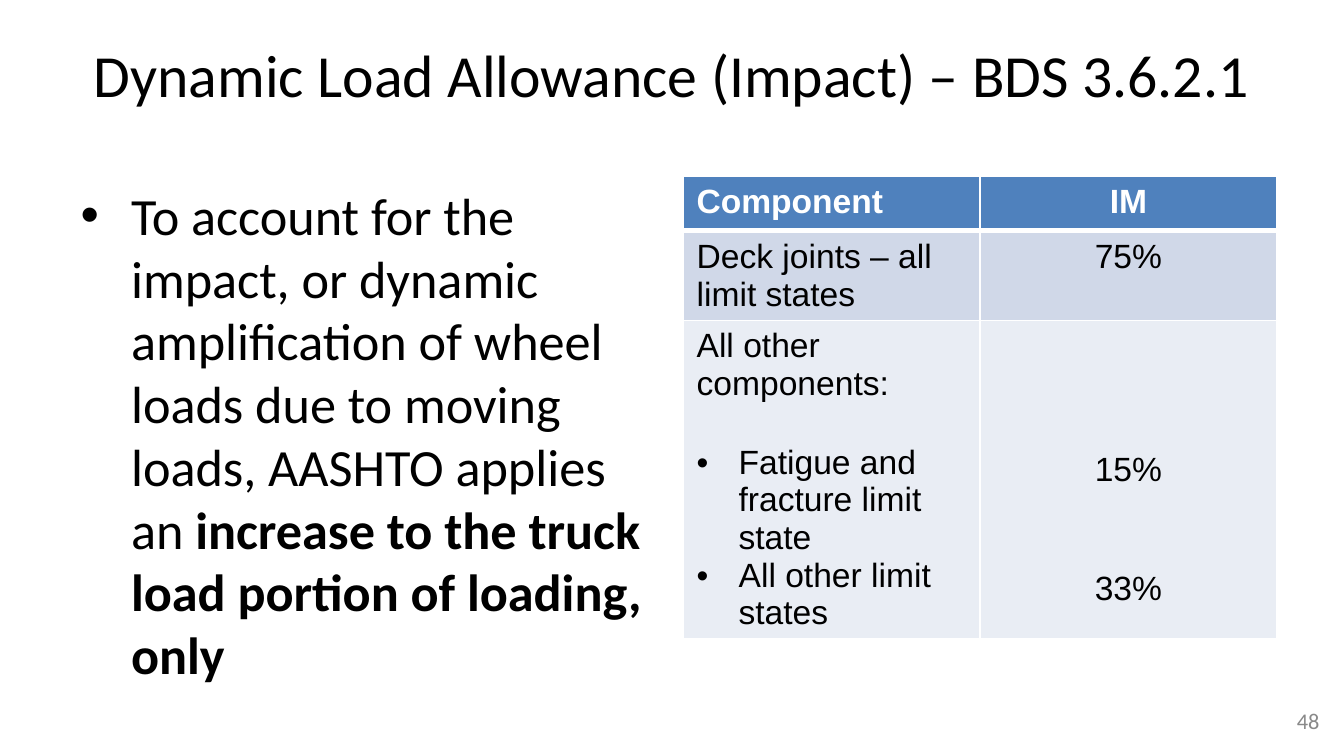
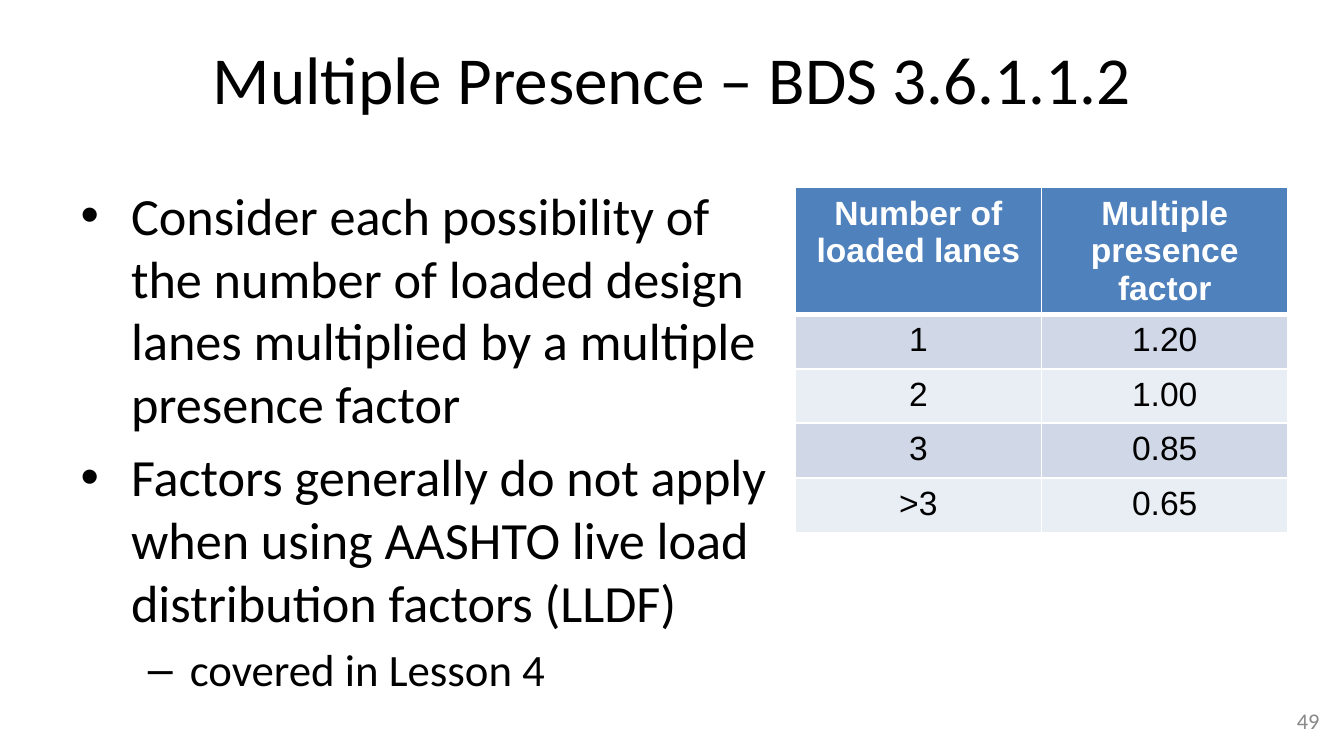
from dataclasses import dataclass

from lxml.etree import SubElement
from pptx import Presentation
from pptx.dml.color import RGBColor
from pptx.enum.text import MSO_ANCHOR, MSO_AUTO_SIZE, PP_ALIGN
from pptx.oxml.ns import qn
from pptx.util import Emu, Pt

PX = 9525  # 96 px to the inch
BLACK, WHITE, GREY = "000000", "FFFFFF", "898989"
HEADER_FILL, BAND_FILLS = "4F81BD", ("D0D8E8", "E9EDF4")
BODY_SIZES = (28, 24)
CELL_INSET = 5
BULLET_INDENT = 30


@dataclass
class Line:
    """One paragraph of a table cell; gap is the space above it in points."""
    text: str
    gap: int = 0
    bullet: bool = False


SLIDES = [
    {
        "number": "48",
        "title": "Dynamic Load Allowance (Impact) – BDS 3.6.2.1",
        "title_size": 32,
        "body_width": 424,
        "body": [
            (0, [("To account for the impact, or dynamic amplification of wheel loads "
                  "due to moving loads, AASHTO applies an ", False),
                 ("increase to the truck load portion of loading, only", True)]),
        ],
        "table_at": (488, 126),
        "column_width": 212,
        "row_heights": [39, 64, 227],
        "alignments": [PP_ALIGN.LEFT, PP_ALIGN.CENTER],
        "rows": [
            [[Line("Component")], [Line("IM")]],
            [[Line("Deck joints – all limit states")], [Line("75%")]],
            [[Line("All other components:"),
              Line("Fatigue and fracture limit state", gap=22, bullet=True),
              Line("All other limit states", bullet=True)],
             [Line("15%", gap=66), Line("33%", gap=44)]],
        ],
    },
    {
        "number": "49",
        "title": "Multiple Presence – BDS 3.6.1.1.2",
        "title_size": 36,
        "body_width": 512,
        "body": [
            (0, [("Consider each possibility of the number of loaded design lanes "
                  "multiplied by a multiple presence factor", False)]),
            (0, [("Factors generally do not apply when using AASHTO live load "
                  "distribution factors (LLDF)", False)]),
            (1, [("covered in Lesson 4", False)]),
        ],
        "table_at": (568, 134),
        "column_width": 176,
        "row_heights": [90, 39, 39, 39, 39],
        "alignments": [PP_ALIGN.CENTER, PP_ALIGN.CENTER],
        "rows": [
            [[Line("Number of loaded lanes")], [Line("Multiple presence factor")]],
            [[Line("1")], [Line("1.20")]],
            [[Line("2")], [Line("1.00")]],
            [[Line("3")], [Line("0.85")]],
            [[Line(">3")], [Line("0.65")]],
        ],
    },
]


def px(length):
    return Emu(length * PX)


def rgb(color):
    return RGBColor.from_string(color)


def place(shape, left, top, width, height):
    shape.left, shape.top = px(left), px(top)
    shape.width, shape.height = px(width), px(height)


def style(paragraph, size, color, face="Calibri", bold=None):
    for run in paragraph.runs:
        run.font.name, run.font.size = face, Pt(size)
        run.font.color.rgb = rgb(color)
        if bold is not None:
            run.font.bold = bold


def set_up_frame(frame, anchor):
    frame.word_wrap = True
    frame.auto_size = MSO_AUTO_SIZE.NONE
    frame.vertical_anchor = anchor


def add_title(slide, text, size):
    title = slide.shapes.title
    place(title, 48, 22, 864, 90)
    set_up_frame(title.text_frame, MSO_ANCHOR.TOP)
    title.text_frame.text = text
    heading = title.text_frame.paragraphs[0]
    heading.alignment = PP_ALIGN.CENTER
    style(heading, size, BLACK)


def add_body(slide, points, width):
    body = slide.placeholders[1]
    place(body, 48, 126, width, 356)
    frame = body.text_frame
    set_up_frame(frame, MSO_ANCHOR.TOP)
    for index, (level, parts) in enumerate(points):
        point = frame.add_paragraph() if index else frame.paragraphs[0]
        point.level = level
        if not index:
            point.space_before = Pt(0)
        for text, bold in parts:
            run = point.add_run()
            run.text = text
            run.font.bold = bold
        style(point, BODY_SIZES[level], BLACK)


def add_number(slide, number):
    box = slide.shapes.add_textbox(px(728), px(500), px(224), px(29))
    set_up_frame(box.text_frame, MSO_ANCHOR.MIDDLE)
    box.text_frame.text = number
    paragraph = box.text_frame.paragraphs[0]
    paragraph.alignment = PP_ALIGN.RIGHT
    style(paragraph, 12, GREY)


def draw_borders(cell, bottom):
    properties = cell._tc.get_or_add_tcPr()
    for side, points in (("L", 1), ("R", 1), ("T", 1), ("B", bottom)):
        border = SubElement(properties, qn(f"a:ln{side}"), w=str(Pt(points)))
        fill = SubElement(border, qn("a:solidFill"))
        SubElement(fill, qn("a:srgbClr"), val=WHITE)


def add_bullet(paragraph):
    properties = paragraph._p.get_or_add_pPr()
    properties.set("marL", str(px(BULLET_INDENT)))
    properties.set("indent", str(px(-BULLET_INDENT)))
    SubElement(properties, qn("a:buFont"), typeface="Arial")
    SubElement(properties, qn("a:buChar"), char="•")


def fill_cell(cell, lines, alignment, is_header, fill):
    draw_borders(cell, 3 if is_header else 1)
    cell.fill.solid()
    cell.fill.fore_color.rgb = rgb(fill)
    cell.margin_top = px(CELL_INSET) + Pt(lines[0].gap)
    frame = cell.text_frame
    for index, line in enumerate(lines):
        paragraph = frame.add_paragraph() if index else frame.paragraphs[0]
        paragraph.text = line.text
        paragraph.alignment = alignment
        if index and line.gap:
            paragraph.space_before = Pt(line.gap)
        if line.bullet:
            add_bullet(paragraph)
        style(paragraph, 18, WHITE if is_header else BLACK, "Arial", is_header)


def add_factor_table(slide, content):
    rows, heights = content["rows"], content["row_heights"]
    alignments, width = content["alignments"], content["column_width"]
    left, top = content["table_at"]
    table = slide.shapes.add_table(
        len(rows), len(alignments), px(left), px(top),
        px(width * len(alignments)), px(sum(heights))).table
    for column in table.columns:
        column.width = px(width)
    for r, (cells, height) in enumerate(zip(rows, heights)):
        table.rows[r].height = px(height)
        fill = BAND_FILLS[(r - 1) % 2] if r else HEADER_FILL
        for c, (lines, alignment) in enumerate(zip(cells, alignments)):
            fill_cell(table.cell(r, c), lines, alignment, r == 0, fill)


def main():
    deck = Presentation()
    deck.slide_width, deck.slide_height = px(960), px(540)
    for content in SLIDES:
        slide = deck.slides.add_slide(deck.slide_layouts[1])
        add_title(slide, content["title"], content["title_size"])
        add_body(slide, content["body"], content["body_width"])
        add_factor_table(slide, content)
        add_number(slide, content["number"])
    deck.save("out.pptx")


if __name__ == "__main__":
    main()
